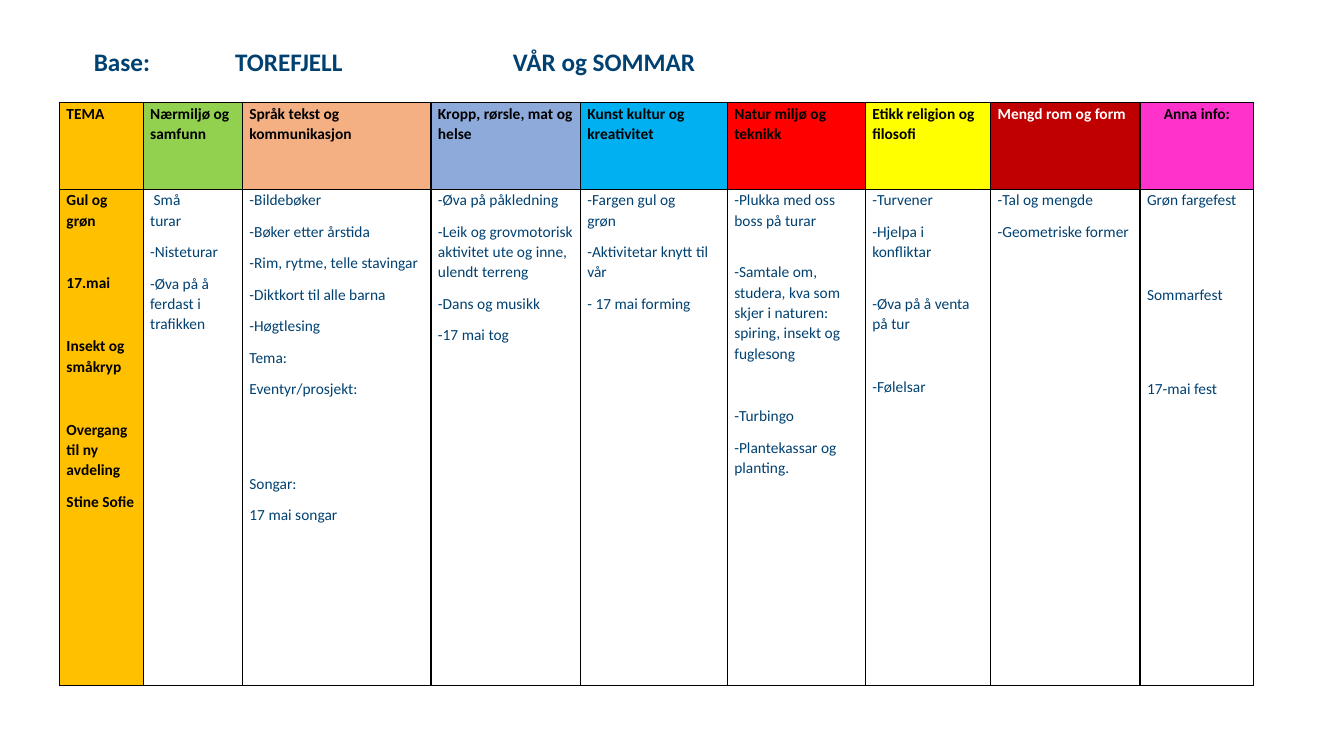
from dataclasses import dataclass

from lxml import etree
from pptx import Presentation
from pptx.dml.color import RGBColor
from pptx.enum.text import MSO_ANCHOR, MSO_AUTO_SIZE, PP_ALIGN
from pptx.oxml.ns import qn
from pptx.util import Pt

LEFT, CENTER = PP_ALIGN.LEFT, PP_ALIGN.CENTER
MIDDLE = MSO_ANCHOR.MIDDLE
GROW = MSO_AUTO_SIZE.SHAPE_TO_FIT_TEXT


@dataclass(frozen=True)
class Theme:
    font: str = "Calibri"
    title_size: float = 18
    cell_size: float = 11
    line_spacing: float = 1.07
    space_after: float = 8
    line_gap: float = 14.4
    cell_inset: float = 5
    border_width: float = 1
    navy: str = "004171"
    black: str = "000000"
    white: str = "FFFFFF"
    gold: str = "FFC000"
    green: str = "92D050"
    peach: str = "F4B083"
    periwinkle: str = "8EAADB"
    sky: str = "00B0F0"
    red: str = "FF0000"
    yellow: str = "FFFF00"
    crimson: str = "C00000"
    pink: str = "FF33CC"


THEME = Theme()
LINE_GAP = THEME.line_gap
SECTION_GAP = THEME.line_gap + THEME.space_after


@dataclass(frozen=True)
class Subject:
    """One column: its heading and its activities, each a text or (text, gap above)."""
    heading: str
    width: float
    heading_fill: str
    activities: list
    heading_color: str = THEME.black
    heading_align: PP_ALIGN = LEFT
    activity_fill: str = ""
    activity_color: str = THEME.navy
    activity_bold: bool = False


SUBJECTS = [
    Subject("TEMA", 59.8, THEME.gold,
            ["Gul og grøn", ("17.mai", SECTION_GAP), ("Insekt og småkryp", SECTION_GAP),
             ("Overgang til ny avdeling", SECTION_GAP), "Stine Sofie"],
            activity_fill=THEME.gold, activity_color=THEME.black, activity_bold=True),
    Subject("Nærmiljø og samfunn", 70.9, THEME.green,
            [" Små\vturar", "-Nisteturar", "-Øva på å ferdast i trafikken"]),
    Subject("Språk tekst og kommunikasjon", 134.7, THEME.peach,
            ["-Bildebøker", "-Bøker etter årstida", "-Rim, rytme, telle stavingar",
             "-Diktkort til alle barna", "-Høgtlesing", "Tema:", "Eventyr/prosjekt:",
             ("Songar:", 2 * SECTION_GAP), "17 mai songar"]),
    Subject("Kropp, rørsle, mat og helse", 106.7, THEME.periwinkle,
            ["-Øva på påkledning",
             "-Leik og grovmotorisk aktivitet ute og inne, ulendt terreng",
             "-Dans og musikk", "-17 mai tog"]),
    Subject("Kunst kultur og kreativitet", 105, THEME.sky,
            ["-Fargen gul og\vgrøn", "-Aktivitetar knytt til vår", "- 17 mai forming"]),
    Subject("Natur miljø og teknikk", 98.6, THEME.red,
            ["-Plukka med oss boss på turar",
             ("-Samtale om, studera, kva som skjer i naturen: "
              "spiring, insekt og fuglesong", LINE_GAP),
             ("-Turbingo", SECTION_GAP), "-Plantekassar og planting."]),
    Subject("Etikk religion og filosofi", 89.5, THEME.yellow,
            ["-Turvener", "-Hjelpa i\vkonfliktar", ("-Øva på å venta på tur", LINE_GAP),
             ("-Følelsar", SECTION_GAP)]),
    Subject("Mengd rom og form", 106.7, THEME.crimson,
            ["-Tal og mengde", "-Geometriske former"], heading_color=THEME.white),
    Subject("Anna info:", 81.3, THEME.pink,
            ["Grøn fargefest", ("Sommarfest", 2 * SECTION_GAP),
             ("17-mai fest", 2 * SECTION_GAP)], heading_align=CENTER),
]


def style_runs(paragraph, size, color, bold):
    for run in paragraph.runs:
        run.font.name = THEME.font
        run.font.size = Pt(size)
        run.font.bold = bold
        run.font.color.rgb = RGBColor.from_string(color)
    for line_break in paragraph._p.findall(qn("a:br")):
        etree.SubElement(line_break, qn("a:rPr"), sz=str(int(size * 100)))


def add_borders(cell):
    properties = cell._tc.get_or_add_tcPr()
    for side in ("lnL", "lnR", "lnT", "lnB"):
        line = etree.SubElement(properties, qn(f"a:{side}"), w=str(Pt(THEME.border_width)))
        fill = etree.SubElement(line, qn("a:solidFill"))
        etree.SubElement(fill, qn("a:srgbClr"), val=THEME.black)


def fill_cell(cell, entries, fill, color, bold, align=LEFT):
    add_borders(cell)
    if fill:
        cell.fill.solid()
        cell.fill.fore_color.rgb = RGBColor.from_string(fill)
    else:
        cell.fill.background()
    cell.margin_left = cell.margin_right = Pt(THEME.cell_inset)
    cell.margin_top = cell.margin_bottom = 0
    frame = cell.text_frame
    for index, entry in enumerate(entries):
        text, gap = (entry, 0) if isinstance(entry, str) else entry
        paragraph = frame.add_paragraph() if index else frame.paragraphs[0]
        paragraph.text = text
        paragraph.alignment = align
        paragraph.line_spacing = THEME.line_spacing
        paragraph.space_after = Pt(THEME.space_after)
        if gap:
            paragraph.space_before = Pt(gap)
        style_runs(paragraph, THEME.cell_size, color, bold)


def add_title(slide, left, top, width, height):
    title = slide.shapes.add_textbox(Pt(left), Pt(top), Pt(width), Pt(height))
    frame = title.text_frame
    frame.word_wrap = True
    frame.auto_size = GROW
    frame.vertical_anchor = MIDDLE
    paragraph = frame.paragraphs[0]
    paragraph.text = "Base:\tTOREFJELL\tVÅR og SOMMAR"
    tabs = etree.SubElement(paragraph._p.get_or_add_pPr(), qn("a:tabLst"))
    for position in (100.8, 299.3):
        etree.SubElement(tabs, qn("a:tab"), pos=str(Pt(position)), algn="l")
    style_runs(paragraph, THEME.title_size, THEME.navy, True)


def add_plan(slide, left, top, width, heading_height, activity_height):
    table = slide.shapes.add_table(
        2, len(SUBJECTS), Pt(left), Pt(top), Pt(width),
        Pt(heading_height + activity_height)).table
    table.first_row = table.horz_banding = False
    table.rows[0].height = Pt(heading_height)
    table.rows[1].height = Pt(activity_height)
    scale = width / sum(subject.width for subject in SUBJECTS)
    for column, subject in enumerate(SUBJECTS):
        table.columns[column].width = Pt(subject.width * scale)
        fill_cell(table.cell(0, column), [subject.heading], subject.heading_fill,
                  subject.heading_color, True, subject.heading_align)
        fill_cell(table.cell(1, column), subject.activities, subject.activity_fill,
                  subject.activity_color, subject.activity_bold)


def main():
    presentation = Presentation()
    presentation.slide_width, presentation.slide_height = Pt(960), Pt(540)
    slide = presentation.slides.add_slide(presentation.slide_layouts[6])
    add_plan(slide, 42.5, 73.5, 853.2, 62, 354.2)
    add_title(slide, 60, 29.5, 900, 29)
    presentation.save("out.pptx")


if __name__ == "__main__":
    main()
